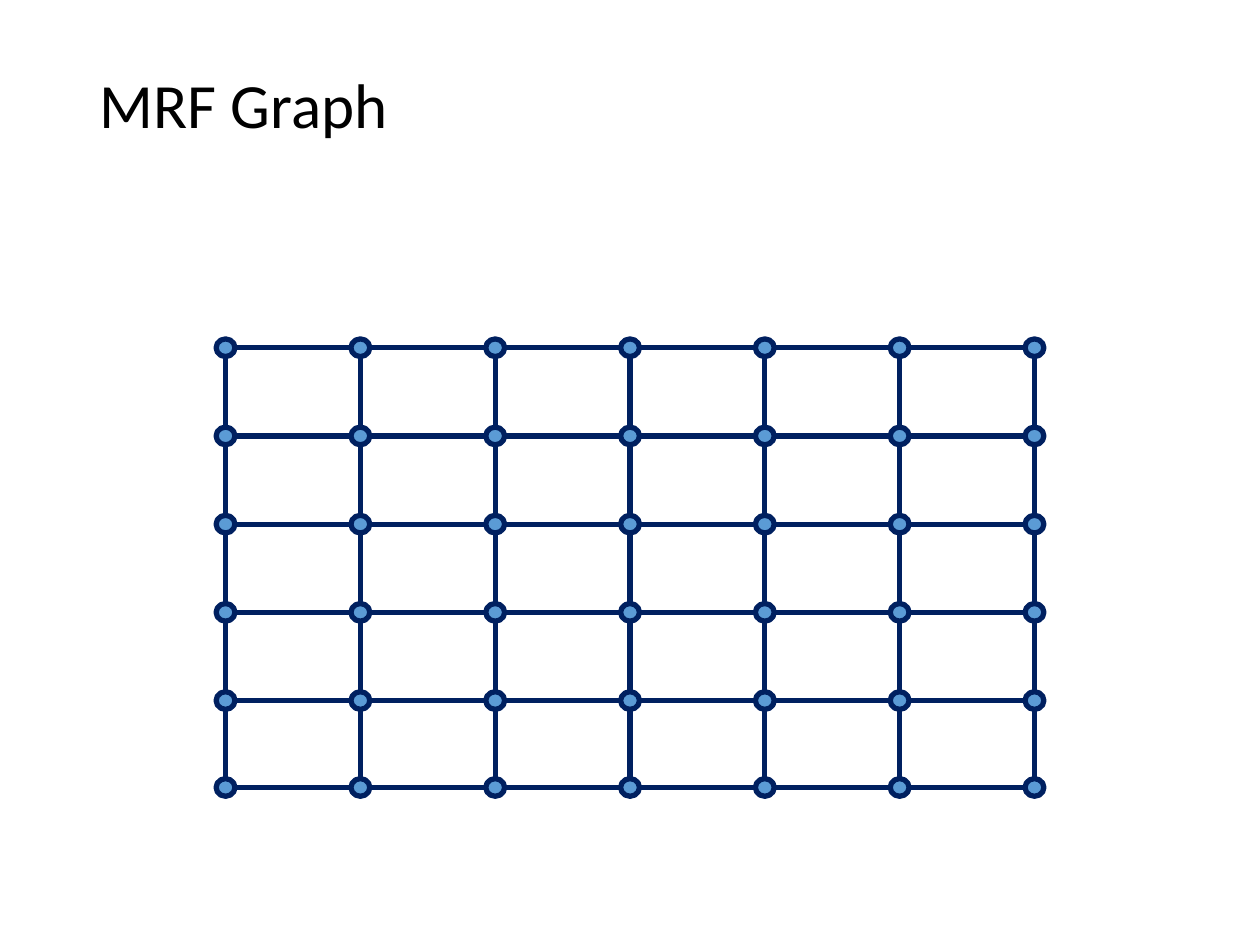
import dataclasses
import itertools

import pptx
import pptx.dml.color
import pptx.enum.shapes
import pptx.enum.text
import pptx.oxml.ns
import pptx.shapes.shapetree
import pptx.util
from lxml import etree

Inches = pptx.util.Inches
Pt = pptx.util.Pt

BLACK = pptx.dml.color.RGBColor(0x00, 0x00, 0x00)
NAVY = pptx.dml.color.RGBColor(0x00, 0x20, 0x60)
BLUE = pptx.dml.color.RGBColor(0x5B, 0x9B, 0xD5)

COLS, ROWS = 7, 6
LEFT, TOP = 1.79, 2.76
RIGHT, BOTTOM = 8.21, 6.25
COL_STEP, ROW_STEP = 1.07, 0.7
NODE_W, NODE_H = 0.15, 0.14
LINE_WIDTH = Pt(3)


@dataclasses.dataclass(frozen=True)
class Node:
    col: int
    row: int

    @property
    def x(self) -> float:
        return min(LEFT + self.col * COL_STEP, RIGHT)

    @property
    def y(self) -> float:
        return min(TOP + self.row * ROW_STEP, BOTTOM)


def draw_edge(shapes: pptx.shapes.shapetree.GroupShapes, a: Node, b: Node) -> None:
    dx = NODE_W / 2 if a.row == b.row else 0
    dy = NODE_H / 2 if a.col == b.col else 0
    sp = shapes.add_connector(
        pptx.enum.shapes.MSO_CONNECTOR.STRAIGHT,
        Inches(a.x + dx), Inches(a.y + dy), Inches(b.x - dx), Inches(b.y - dy),
    )
    sp.line.color.rgb = NAVY
    sp.line.width = LINE_WIDTH
    etree.SubElement(sp._element.spPr, pptx.oxml.ns.qn("a:effectLst"))


def draw_node(shapes: pptx.shapes.shapetree.GroupShapes, node: Node) -> None:
    sp = shapes.add_shape(
        pptx.enum.shapes.MSO_SHAPE.OVAL,
        Inches(node.x - NODE_W / 2), Inches(node.y - NODE_H / 2),
        Inches(NODE_W), Inches(NODE_H),
    )
    sp.shadow.inherit = False
    sp.fill.solid()
    sp.fill.fore_color.rgb = BLUE
    sp.line.color.rgb = NAVY
    sp.line.width = LINE_WIDTH


def main() -> None:
    prs = pptx.Presentation()
    prs.slide_width, prs.slide_height = Inches(10), Inches(7.5)
    s = prs.slides.add_slide(prs.slide_layouts[5])

    title = s.shapes.title
    title.left, title.top = Inches(0.69), Inches(0.41)
    title.width, title.height = Inches(8.62), Inches(0.9)
    tf = title.text_frame
    tf.text = "MRF Graph"
    tf.vertical_anchor = pptx.enum.text.MSO_ANCHOR.MIDDLE
    p = tf.paragraphs[0]
    p.alignment = pptx.enum.text.PP_ALIGN.LEFT
    p.line_spacing = 0.9
    p.font.name = "Calibri"
    p.font.size = Pt(36)
    p.font.color.rgb = BLACK

    graph = s.shapes.add_group_shape().shapes
    nodes = [Node(c, r) for r, c in itertools.product(range(ROWS), range(COLS))]
    for node in nodes:
        if node.col < COLS - 1:
            draw_edge(graph, node, Node(node.col + 1, node.row))
        if node.row < ROWS - 1:
            draw_edge(graph, node, Node(node.col, node.row + 1))
    for node in nodes:
        draw_node(graph, node)

    prs.save("out.pptx")


if __name__ == "__main__":
    main()
